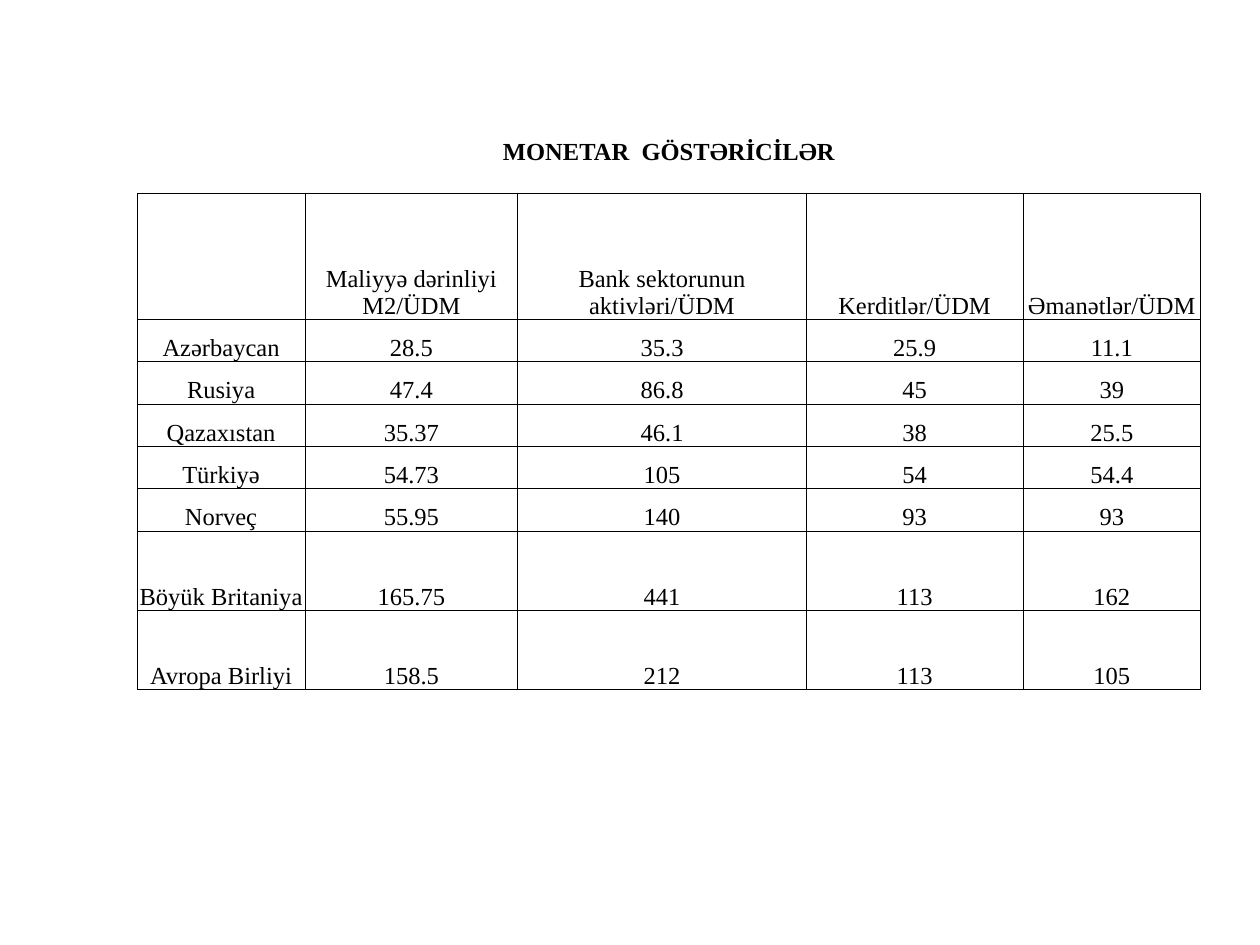
from lxml import etree
from pptx import Presentation, util as u
from pptx.dml.color import RGBColor
from pptx.enum import text
from pptx.oxml.ns import qn

COLORS = {"ink": "000000"}
COLUMN_WIDTHS = [1.33, 1.69, 2.29, 1.72, 1.41]
ROW_HEIGHTS = [0.44, 1] + [1.68 / 5] * 5 + [0.63] * 2
TITLE = "MONETAR  GÖSTƏRİCİLƏR"
ROWS = [
    ["", "Maliyyə dərinliyi M2/ÜDM", "Bank sektorunun aktivləri/ÜDM", "Kerditlər/ÜDM", "Əmanətlər/ÜDM"],
    ["Azərbaycan", "28.5", "35.3", "25.9", "11.1"],
    ["Rusiya", "47.4", "86.8", "45", "39"],
    ["Qazaxıstan", "35.37", "46.1", "38", "25.5"],
    ["Türkiyə", "54.73", "105", "54", "54.4"],
    ["Norveç", "55.95", "140", "93", "93"],
    ["Böyük Britaniya", "165.75", "441", "113", "162"],
    ["Avropa Birliyi", "158.5", "212", "113", "105"],
]


class SlideBuilder:
    font = {"name": "Times New Roman", "size": u.Pt(14)}
    cell_format = {
        "margin_left": u.Inches(0.01),
        "margin_right": u.Inches(0.01),
        "margin_top": u.Inches(0.01),
        "margin_bottom": 0,
        "vertical_anchor": text.MSO_ANCHOR.BOTTOM,
    }

    def __init__(self, page):
        self.page = page

    def border(self, cell, visible_sides):
        properties = cell._tc.get_or_add_tcPr()
        for side in "LRTB":
            line = etree.SubElement(properties, qn(f"a:ln{side}"), w=str(u.Pt(0.5)))
            if side in visible_sides:
                fill = etree.SubElement(line, qn("a:solidFill"))
                etree.SubElement(fill, qn("a:srgbClr"), val=COLORS["ink"])
            else:
                etree.SubElement(line, qn("a:noFill"))

    def cell(self, cell, content, bold=False, sides="LRTB", **changes):
        for name, value in {**self.cell_format, **changes}.items():
            setattr(cell, name, value)
        self.border(cell, sides)
        cell.fill.background()
        if not content:
            return
        para = cell.text_frame.paragraphs[0]
        para.alignment = text.PP_ALIGN.CENTER
        span = para.add_run()
        span.text = content
        for name, value in {**self.font, "bold": bold}.items():
            setattr(span.font, name, value)
        span.font.color.rgb = RGBColor.from_string(COLORS["ink"])

    def table(self, left, top, title, rows, widths, heights):
        frame = self.page.shapes.add_table(
            len(heights), len(widths), u.Inches(left), u.Inches(top),
            u.Inches(sum(widths)), u.Inches(sum(heights)))
        table = frame.table
        table.first_row = table.horz_banding = False
        for column, width in zip(table.columns, widths):
            column.width = u.Inches(width)
        for row, height in zip(table.rows, heights):
            row.height = u.Inches(height)
        table.cell(0, 0).merge(table.cell(0, len(widths) - 1))
        for column in range(len(widths)):
            self.cell(table.cell(0, column), "" if column else title, bold=True,
                      sides="B", margin_bottom=u.Inches(0.22))
        for number, row in enumerate(rows, 1):
            for column, content in enumerate(row):
                self.cell(table.cell(number, column), content)


def main():
    deck = Presentation()
    deck.slide_width, deck.slide_height = u.Inches(10), u.Inches(7.5)
    builder = SlideBuilder(deck.slides.add_slide(deck.slide_layouts[6]))
    builder.table(1.09, 1.09, TITLE, ROWS, COLUMN_WIDTHS, ROW_HEIGHTS)
    deck.save("out.pptx")


if __name__ == "__main__":
    main()
